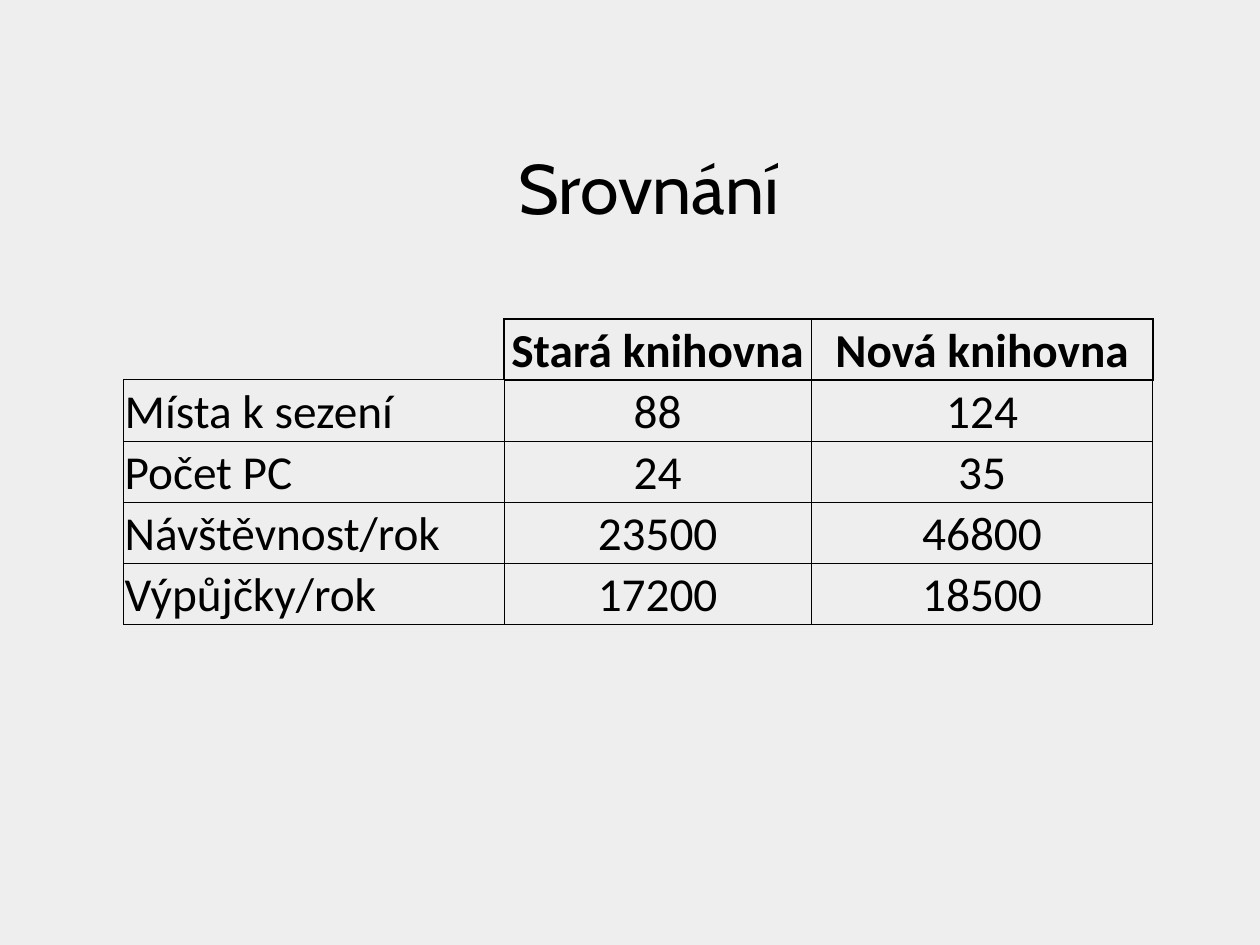
"""Build a slide that compares the old and the new library."""
from lxml import etree
from pptx import Presentation
from pptx.dml.color import RGBColor
from pptx.enum.text import MSO_ANCHOR, PP_ALIGN
from pptx.oxml.ns import qn
from pptx.util import Inches, Pt

BOTTOM = MSO_ANCHOR.BOTTOM
LEFT, CENTER = PP_ALIGN.LEFT, PP_ALIGN.CENTER

TITLE = "Srovnání"
ROWS = [
    ("", "Stará knihovna", "Nová knihovna"),
    ("Místa k sezení", "88", "124"),
    ("Počet PC", "24", "35"),
    ("Návštěvnost/rok", "23500", "46800"),
    ("Výpůjčky/rok", "17200", "18500"),
]
WIDTHS = (3.02, 2.44, 2.71)
HIGH = 0.485
BLACK, GREY = "000000", "EEEEEE"


def color(code):
    """Turn a hex string into a colour."""
    return RGBColor.from_string(code)


def style(frame, name, size, align, bold=False):
    """Format the paragraphs of a text frame."""
    for para in frame.paragraphs:
        para.alignment = align
        font = para.font
        font.name, font.size, font.bold = name, Pt(size), bold
        font.color.rgb = color(BLACK)


def border(cell, side, width):
    """Draw one side of a cell, or clear it when the width is zero."""
    line = etree.SubElement(cell._tc.get_or_add_tcPr(), qn("a:ln" + side))
    line.set("w", str(Pt(width)))
    if width:
        fill = etree.SubElement(line, qn("a:solidFill"))
        etree.SubElement(fill, qn("a:srgbClr")).set("val", BLACK)
    else:
        etree.SubElement(line, qn("a:noFill"))


def fill_cell(cell, text, row, col):
    """Write and format one table cell."""
    blank = row == col == 0
    head = row == 0 and col > 0
    widths = {
        "L": 0 if blank else 1 if head and col == 1 else 0.5,
        "R": 1 if blank or head and col == 2 else 0.5,
        "T": 0 if blank else 1 if head or row == 1 and col else 0.5,
        "B": 1 if head else 0.5,
    }
    for side, width in widths.items():
        border(cell, side, width)
    cell.fill.background()
    cell.vertical_anchor = BOTTOM
    cell.margin_left = cell.margin_right = cell.margin_top = Inches(0.01)
    cell.margin_bottom = 0
    cell.text_frame.text = text
    style(cell.text_frame, "Calibri", 27, CENTER if col else LEFT, head)


def main():
    """Lay out the slide and save it."""
    deck = Presentation()
    deck.slide_width, deck.slide_height = Inches(10), Inches(7.5)
    slide = deck.slides.add_slide(deck.slide_layouts[5])
    slide.background.fill.solid()
    slide.background.fill.fore_color.rgb = color(GREY)

    title = slide.shapes.title
    title.left, title.top = Inches(1.21), Inches(0.6)
    title.width, title.height = Inches(7.88), Inches(1.26)
    title.text_frame.text = TITLE
    title.text_frame.vertical_anchor = BOTTOM
    style(title.text_frame, "Cabin", 40, CENTER)

    table = slide.shapes.add_table(
        len(ROWS), len(WIDTHS), Inches(0.98), Inches(2.53),
        Inches(sum(WIDTHS)), Inches(HIGH * len(ROWS))).table
    table.first_row = table.horz_banding = False
    for column, width in zip(table.columns, WIDTHS):
        column.width = Inches(width)
    for row, texts in enumerate(ROWS):
        for col, text in enumerate(texts):
            fill_cell(table.cell(row, col), text, row, col)

    deck.save("out.pptx")


if __name__ == "__main__":
    main()
